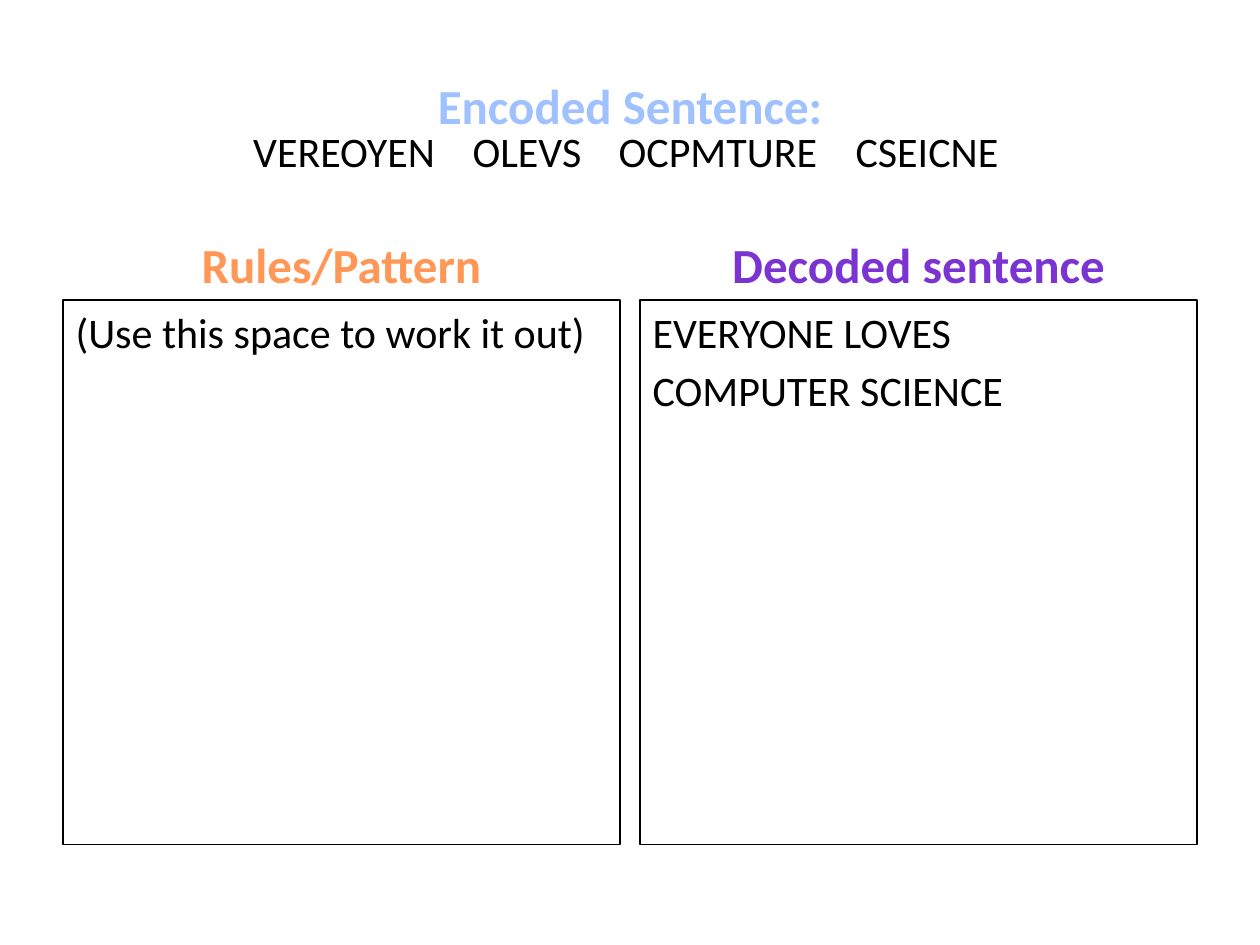
"""Build the sentence-decoding worksheet slide."""
from lxml import etree
from pptx import Presentation
from pptx.dml.color import RGBColor
from pptx.enum.text import MSO_ANCHOR, MSO_AUTO_SIZE, PP_ALIGN
from pptx.oxml.ns import qn
from pptx.util import Inches, Pt

LEFT, CENTER = PP_ALIGN.LEFT, PP_ALIGN.CENTER
MIDDLE, TOP = MSO_ANCHOR.MIDDLE, MSO_ANCHOR.TOP
NO_FIT, GROW = MSO_AUTO_SIZE.NONE, MSO_AUTO_SIZE.SHAPE_TO_FIT_TEXT

BLACK = "000000"
ENCODED_WORDS = ["VEREOYEN", "OLEVS", "OCPMTURE", "CSEICNE"]
WORD_STOPS = [1.74, 2.9, 4.78]
SENTENCE_HEADING = ("Encoded Sentence:", "A0C1FF", 3.3)
COLUMNS = [
    (("Rules/Pattern", "FF9856", 2.46), ["(Use this space to work it out)"]),
    (("Decoded sentence", "7B34D2", 3.2), ["EVERYONE LOVES", "COMPUTER SCIENCE"]),
]

SLIDE_W, SLIDE_H = 10, 7.5
MARGIN, COLUMN_W, COLUMN_TOP, COLUMN_H = 0.5, 4.42, 2.38, 4.32
CONTENT_W = SLIDE_W - 2 * MARGIN
COLUMN_STEP = CONTENT_W - COLUMN_W
HEADING_H = 0.57


def rgb(color):
    return RGBColor.from_string(color)


def place(shape, left, top, width, height):
    shape.left, shape.top = Inches(left), Inches(top)
    shape.width, shape.height = Inches(width), Inches(height)


def style(paragraph, size, color, align, bold=False):
    paragraph.alignment = align
    font = paragraph.font
    font.name, font.size, font.bold = "Calibri", Pt(size), bold
    font.color.rgb = rgb(color)


def add_heading(slide, heading, center, top):
    text, color, width = heading
    box = slide.shapes.add_textbox(
        Inches(center - width / 2), Inches(top), Inches(width), Inches(HEADING_H))
    frame = box.text_frame
    frame.text = text
    frame.word_wrap, frame.auto_size = False, GROW
    style(frame.paragraphs[0], 28, color, CENTER, bold=True)


def fill_title(title):
    place(title, MARGIN, 0.3, CONTENT_W, 1.38)
    frame = title.text_frame
    frame.auto_size, frame.vertical_anchor = NO_FIT, MIDDLE
    frame.margin_left, frame.margin_top = Inches(1.51), Inches(0.46)
    frame.text = "\t".join(ENCODED_WORDS)
    sentence = frame.paragraphs[0]
    style(sentence, 24, BLACK, LEFT)
    stops = etree.SubElement(sentence._p.get_or_add_pPr(), qn("a:tabLst"))
    for stop in WORD_STOPS:
        etree.SubElement(stops, qn("a:tab"), pos=str(Inches(stop)), algn="l")
    sentence._p.pPr.insert(0, stops)


def fill_column(body, lines, left):
    place(body, left, COLUMN_TOP, COLUMN_W, COLUMN_H)
    body.line.color.rgb, body.line.width = rgb(BLACK), Pt(0.75)
    frame = body.text_frame
    frame.auto_size, frame.vertical_anchor = NO_FIT, TOP
    frame.text = "\n".join(lines)
    for paragraph in frame.paragraphs:
        style(paragraph, 24, BLACK, LEFT)
        properties = paragraph._p.get_or_add_pPr()
        properties.set("marL", "0")
        properties.set("indent", "0")
        properties.insert(0, etree.Element(qn("a:buNone")))


def main():
    presentation = Presentation()
    presentation.slide_width, presentation.slide_height = Inches(SLIDE_W), Inches(SLIDE_H)
    slide = presentation.slides.add_slide(
        presentation.slide_layouts.get_by_name("Two Content"))
    title, *bodies = slide.placeholders

    fill_title(title)
    add_heading(slide, SENTENCE_HEADING, SLIDE_W / 2, 0.55)
    for index, (body, (heading, lines)) in enumerate(zip(bodies, COLUMNS)):
        left = MARGIN + index * COLUMN_STEP
        fill_column(body, lines, left)
        add_heading(slide, heading, left + COLUMN_W / 2, 1.81)

    presentation.save("out.pptx")


if __name__ == "__main__":
    main()
